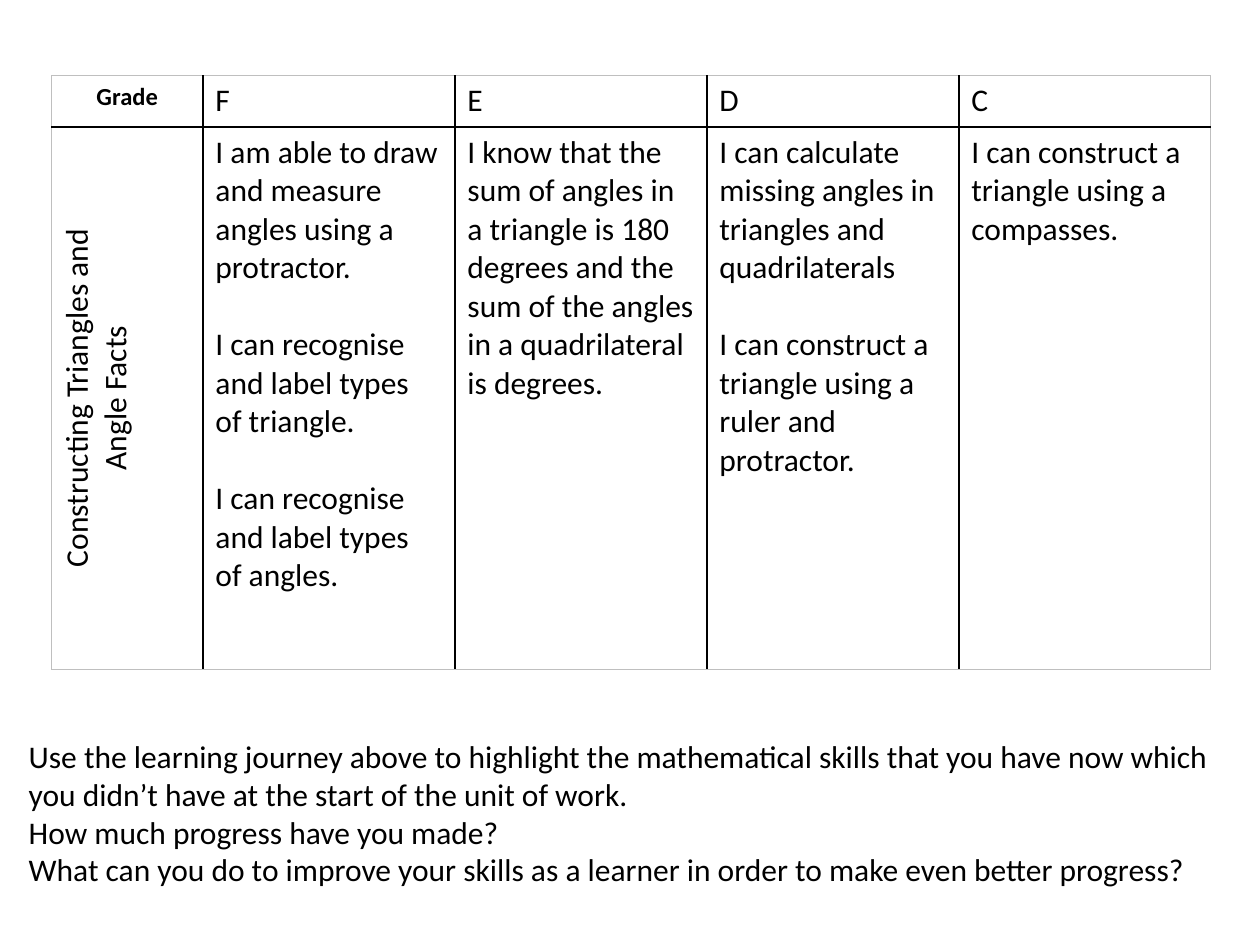
import lxml.etree
import pptx
import pptx.dml.color
import pptx.enum.text
import pptx.oxml.ns
import pptx.util

Inches = pptx.util.Inches
Pt = pptx.util.Pt
ALIGN = pptx.enum.text.PP_ALIGN

COLORS = {"ink": "000000", "paper": "FFFFFF", "edge": "BFBFBF"}
HEADS = ["Grade", "F", "E", "D", "C"]
SKILLS = [
    ["Constructing Triangles and", "Angle Facts"],
    ["I am able to draw and measure angles using a protractor.",
     "I can recognise and label types of triangle.",
     "I can recognise and label types of angles."],
    ["I know that the sum of angles in a triangle is 180 degrees and the sum "
     "of the angles in a quadrilateral is degrees."],
    ["I can calculate missing angles in triangles and quadrilaterals",
     "I can construct a triangle using a ruler and protractor."],
    ["I can construct a triangle using a compasses."],
]
TASKS = [
    "Use the learning journey above to highlight the mathematical skills that "
    "you have now which you didn’t have at the start of the unit of work.",
    "How much progress have you made?",
    "What can you do to improve your skills as a learner in order to make "
    "even better progress?",
]


def rgb(name):
    return pptx.dml.color.RGBColor.from_string(COLORS[name])


def write(frame, lines, size=18, bold=False, align=ALIGN.LEFT, gap=0,
          font="Calibri", color="ink"):
    """Fill a text frame with one paragraph a line, gap points apart."""
    for i, line in enumerate(lines):
        para = frame.add_paragraph() if i else frame.paragraphs[0]
        para.alignment = align
        para.space_before = Pt(gap if i else 0)
        run = para.add_run()
        run.text = line
        run.font.name = font
        run.font.size = Pt(size)
        run.font.bold = bold
        run.font.color.rgb = rgb(color)


def rule(cell, side, color, width):
    """Draw one border of a cell; side is L, R, T or B."""
    qn = pptx.oxml.ns.qn
    props = cell._tc.get_or_add_tcPr()
    line = lxml.etree.SubElement(props, qn("a:ln" + side), w=str(Pt(width)))
    fill = lxml.etree.SubElement(line, qn("a:solidFill"))
    lxml.etree.SubElement(fill, qn("a:srgbClr"), val=COLORS[color])


class Page:
    """Holds the current slide and the line widths of its grid."""

    def __init__(self, slide, inner=1.25, outer=0.5):
        self.slide = slide
        self.inner = inner
        self.outer = outer

    def text(self, box, lines, **style):
        frame = self.slide.shapes.add_textbox(*map(Inches, box)).text_frame
        frame.word_wrap = True
        write(frame, lines, **style)

    def grid(self, left, top, cols, rows):
        shape = self.slide.shapes.add_table(
            len(rows), len(cols), Inches(left), Inches(top),
            Inches(sum(cols)), Inches(sum(rows)))
        table = shape.table
        table.first_row = table.horz_banding = False
        for col, width in zip(table.columns, cols):
            col.width = Inches(width)
        for row, height in zip(table.rows, rows):
            row.height = Inches(height)
        for r in range(len(rows)):
            for c in range(len(cols)):
                cell = table.cell(r, c)
                ends = {"L": c == 0, "R": c == len(cols) - 1,
                        "T": r == 0, "B": r == len(rows) - 1}
                for side, end in ends.items():
                    rule(cell, side, "edge" if end else "ink",
                         self.outer if end else self.inner)
                cell.fill.solid()
                cell.fill.fore_color.rgb = rgb("paper")
        return table


def main():
    deck = pptx.Presentation()
    deck.slide_width, deck.slide_height = Inches(10), Inches(7.5)
    page = Page(deck.slides.add_slide(deck.slide_layouts[6]))

    page.text((0.13, 5.8, 9.76, 1.31), TASKS)

    table = page.grid(0.41, 0.6, [1.2] + [2] * 4, [0.41, 4.3])
    for c, (head, skills) in enumerate(zip(HEADS, SKILLS)):
        top, body = table.cell(0, c), table.cell(1, c)
        if c == 0:
            write(top.text_frame, [head], size=14, bold=True,
                  align=ALIGN.CENTER)
            write(body.text_frame, skills, align=ALIGN.CENTER)
            body._tc.get_or_add_tcPr().set("vert", "vert270")
        else:
            write(top.text_frame, [head])
            write(body.text_frame, skills, gap=22)
    deck.save("out.pptx")


if __name__ == "__main__":
    main()
